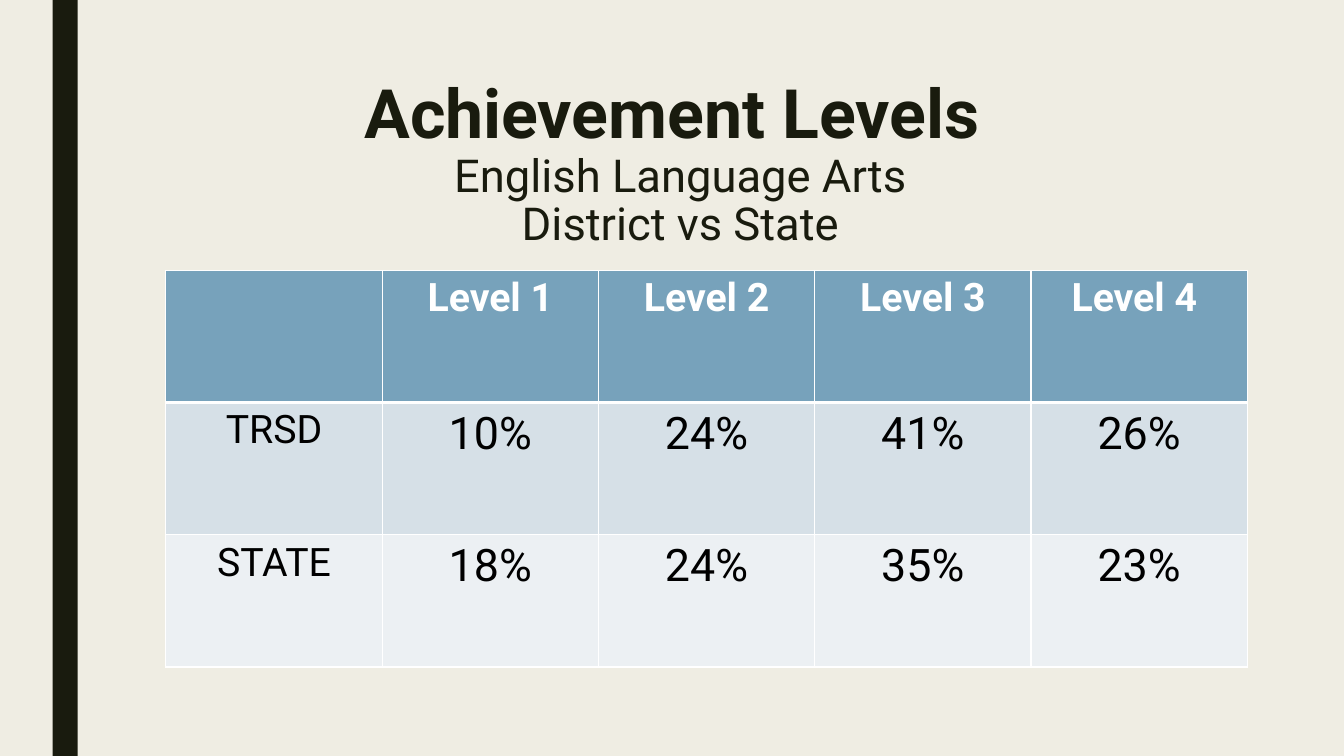
from dataclasses import dataclass

from lxml.etree import SubElement
from pptx import Presentation
from pptx.dml.color import RGBColor
from pptx.enum.shapes import MSO_SHAPE
from pptx.enum.text import MSO_ANCHOR, PP_ALIGN
from pptx.oxml.ns import qn
from pptx.util import Pt

FONT = "Roboto"
INK = "191B0E"
WHITE = "FFFFFF"
BLACK = "000000"
COLUMN_WIDTH = 154.5
ROW_HEIGHT = 94.5


@dataclass
class LevelRow:
    texts: list[str]
    fill: str
    color: str
    label_size: float
    value_size: float
    bold: bool = False
    top_line: float = 1
    bottom_line: float = 1


LEVEL_ROWS = [
    LevelRow(["", "Level 1", "Level 2", "Level 3", "Level 4 "],
             "77A2BB", WHITE, 28, 28, bold=True, bottom_line=3),
    LevelRow(["TRSD", "10%", "24%", "41%", "26%"],
             "D6E0E7", BLACK, 28, 32, top_line=3),
    LevelRow(["STATE", "18%", "24%", "35%", "23%"],
             "ECF0F3", BLACK, 28, 32),
]


def paint(fill, color: str) -> None:
    fill.solid()
    fill.fore_color.rgb = RGBColor.from_string(color)


def add_text(para, text: str, *, size: float, color: str, bold: bool = False) -> None:
    span = para.add_run()
    span.text = text
    span.font.name = FONT
    span.font.size = Pt(size)
    span.font.bold = bold
    span.font.color.rgb = RGBColor.from_string(color)


def add_border(cell, side: str, width: float) -> None:
    line = SubElement(cell._tc.get_or_add_tcPr(), qn(f"a:{side}"), w=str(Pt(width)))
    solid = SubElement(line, qn("a:solidFill"))
    SubElement(solid, qn("a:srgbClr"), val=WHITE)


def fill_row(table, row_index: int, row: LevelRow) -> None:
    for column_index, text in enumerate(row.texts):
        cell = table.cell(row_index, column_index)
        # Borders come before the fill in the cell properties
        for side, width in (("lnL", 1), ("lnR", 1),
                            ("lnT", row.top_line), ("lnB", row.bottom_line)):
            add_border(cell, side, width)
        paint(cell.fill, row.fill)
        para = cell.text_frame.paragraphs[0]
        para.alignment = PP_ALIGN.CENTER
        size = row.value_size if column_index else row.label_size
        if text:
            add_text(para, text, size=size, color=row.color, bold=row.bold)
        else:
            para.font.size = Pt(size)


def add_title(page) -> None:
    box = page.shapes.add_textbox(Pt(108), Pt(54), Pt(756), Pt(116.6))
    frame = box.text_frame
    frame.word_wrap = True
    frame.vertical_anchor = MSO_ANCHOR.TOP
    para = frame.paragraphs[0]
    para.alignment = PP_ALIGN.CENTER
    para.line_spacing = 0.89
    add_text(para, "Achievement Levels ", size=48.6, color=INK, bold=True)
    for subtitle in ("English Language Arts", "District vs State"):
        para.add_line_break()
        add_text(para, subtitle, size=32.4, color=INK)


def add_levels_table(page) -> None:
    column_count = len(LEVEL_ROWS[0].texts)
    row_count = len(LEVEL_ROWS)
    table = page.shapes.add_table(
        row_count, column_count, Pt(118.5), Pt(193),
        Pt(COLUMN_WIDTH * column_count), Pt(ROW_HEIGHT * row_count)).table
    for column in table.columns:
        column.width = Pt(COLUMN_WIDTH)
    for row_index, row in enumerate(LEVEL_ROWS):
        table.rows[row_index].height = Pt(ROW_HEIGHT)
        fill_row(table, row_index, row)


def main() -> None:
    deck = Presentation()
    deck.slide_width, deck.slide_height = Pt(960), Pt(540)
    page = deck.slides.add_slide(deck.slide_layouts[6])
    paint(page.background.fill, "EFEDE3")

    # Dark bar at the left
    bar = page.shapes.add_shape(MSO_SHAPE.RECTANGLE, Pt(37.5), Pt(0), Pt(18), Pt(540))
    bar.shadow.inherit = False
    paint(bar.fill, INK)
    bar.line.fill.background()

    # Table and title
    add_levels_table(page)
    add_title(page)
    deck.save("out.pptx")


if __name__ == "__main__":
    main()
